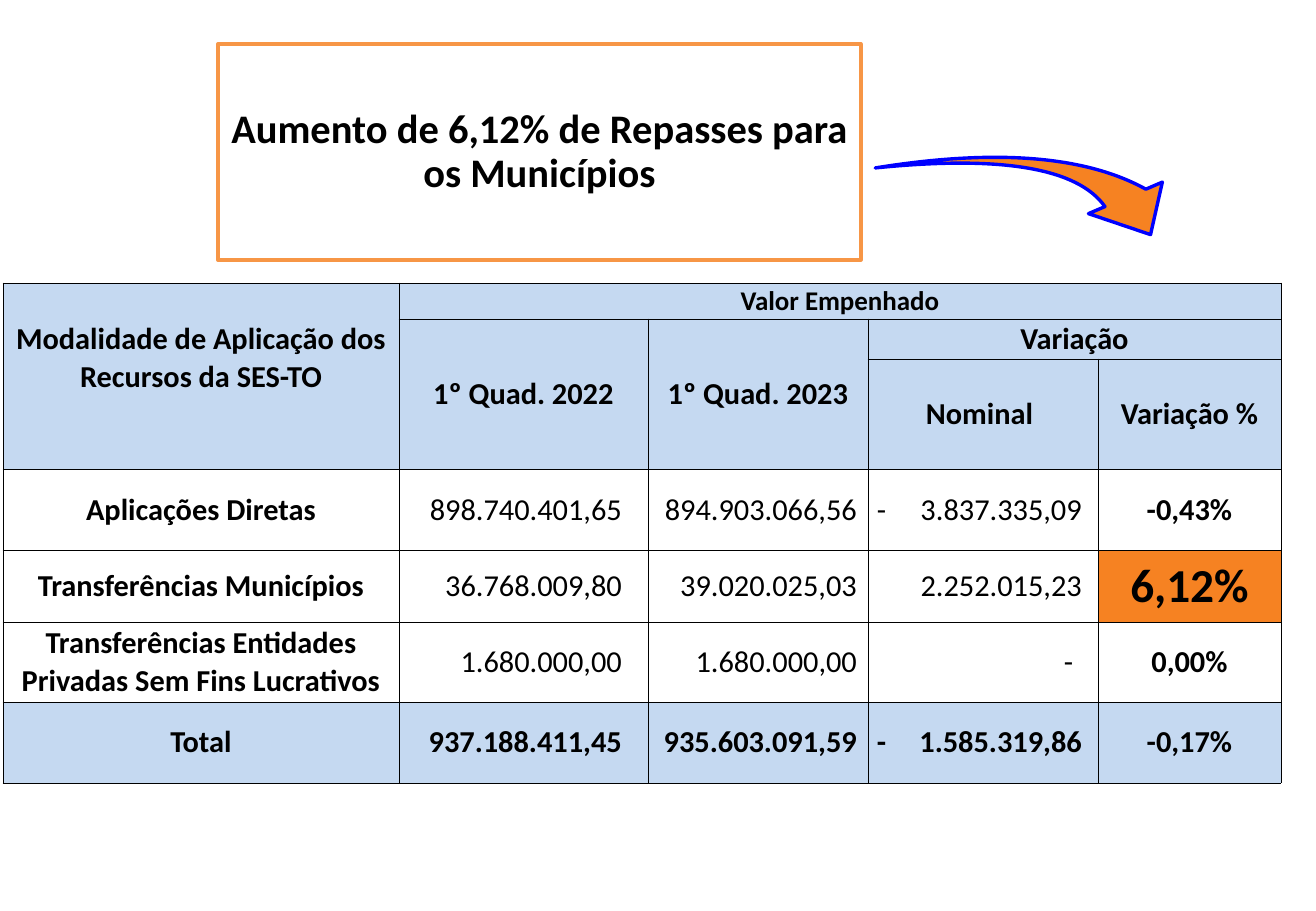
from lxml import etree
from pptx import Presentation
from pptx.dml.color import RGBColor
from pptx.enum.shapes import MSO_SHAPE
from pptx.enum.text import MSO_ANCHOR, MSO_AUTO_SIZE, PP_ALIGN
from pptx.oxml.ns import qn
from pptx.util import Emu, Pt

EMU_PER_PX = 914400 / 121.5
BLACK, WHITE, BLUE = "000000", "FFFFFF", "0000FF"
HEADER, ORANGE, FRAME = "C5D9F1", "F68222", "F79646"


def px(length):
    return Emu(round(length * EMU_PER_PX))


def color(value):
    return RGBColor.from_string(value)


def apply(target, values):
    for name, value in values.items():
        setattr(target, name, value)


class SlideBuilder:
    """Holds the text style and the current page."""

    font_name = "Calibri"

    def __init__(self, deck):
        self.page = deck.slides.add_slide(deck.slide_layouts[5])

    def paint(self, shape, fill, line):
        shape.fill.solid()
        shape.fill.fore_color.rgb = color(fill)
        shape.line.color.rgb = color(line)
        shape.line.width = Pt(2)

    def add_text(self, para, text, size, bold=True, align=PP_ALIGN.CENTER):
        para.alignment = align
        span = para.add_run()
        span.text = text
        apply(span.font, {"name": self.font_name, "size": Pt(size), "bold": bold})
        span.font.color.rgb = color(BLACK)

    def title(self, text, left, top, width, height):
        box = self.page.shapes.title
        apply(box, {"left": px(left), "top": px(top),
                    "width": px(width), "height": px(height)})
        self.paint(box, WHITE, FRAME)
        frame = box.text_frame
        apply(frame, {"word_wrap": True, "auto_size": MSO_AUTO_SIZE.NONE,
                      "vertical_anchor": MSO_ANCHOR.MIDDLE,
                      "margin_left": px(4), "margin_right": px(4),
                      "margin_top": px(4), "margin_bottom": px(4)})
        para = frame.paragraphs[0]
        para.line_spacing = 0.9
        self.add_text(para, text, 24)

    def swoosh(self, left, top, width, height, rotation, bends):
        arrow = self.page.shapes.add_shape(
            MSO_SHAPE.SWOOSH_ARROW, px(left), px(top), px(width), px(height))
        arrow.shadow.inherit = False
        arrow.rotation = rotation
        for index, bend in enumerate(bends):
            arrow.adjustments[index] = bend
        self.paint(arrow, ORANGE, BLUE)

    def table(self, left, top, widths, heights):
        table = self.page.shapes.add_table(
            len(heights), len(widths), px(left), px(top),
            px(sum(widths)), px(sum(heights))).table
        apply(table, {"first_row": False, "horz_banding": False})
        for column, width in zip(table.columns, widths):
            column.width = px(width)
        for row, height in zip(table.rows, heights):
            row.height = px(height)
        for cell in table.iter_cells():
            apply(cell, {"margin_left": 0, "margin_right": 0, "margin_top": 0,
                         "margin_bottom": 0, "vertical_anchor": MSO_ANCHOR.MIDDLE})
            self.border(cell)
        return table

    def border(self, cell):
        properties = cell._tc.get_or_add_tcPr()
        for side in ("a:lnL", "a:lnR", "a:lnT", "a:lnB"):
            line = etree.SubElement(properties, qn(side), w=str(Pt(0.5)))
            fill = etree.SubElement(line, qn("a:solidFill"))
            etree.SubElement(fill, qn("a:srgbClr"), val=BLACK)

    def fill(self, cell, value):
        cell.fill.solid()
        cell.fill.fore_color.rgb = color(value)

    def amount(self, cell, text, bold, gap):
        """Right-aligned number; a leading sign stands at the left edge."""
        para = cell.text_frame.paragraphs[0]
        if "\t" not in text:
            cell.margin_right = px(gap)
            self.add_text(para, text, 18, bold, PP_ALIGN.RIGHT)
            return
        cell.margin_left = px(SIGN_INSET)
        stops = etree.SubElement(para._p.get_or_add_pPr(), qn("a:tabLst"))
        position = px(WIDTHS[3] - SIGN_INSET - gap)
        etree.SubElement(stops, qn("a:tab"), pos=str(position), algn="r")
        self.add_text(para, text, 18, bold, PP_ALIGN.LEFT)


WIDTHS = [396, 249, 220, 230, 183]
HEIGHTS = [36, 40, 110, 81, 72, 80, 81]
SIGN_INSET = 9
GAPS = [26, 11, 16]
DASH_GAP = 25

# First row, first column, last row, last column, text, size, extra margins
HEADINGS = [
    (0, 0, 2, 0, "Modalidade de Aplicação dos Recursos da SES-TO", 18,
     {"margin_bottom": px(36)}),
    (0, 1, 0, 4, "Valor Empenhado", 16, {}),
    (1, 1, 2, 1, "1º Quad. 2022", 18, {}),
    (1, 2, 2, 2, "1º Quad. 2023", 18, {}),
    (1, 3, 1, 4, "Variação", 18, {}),
    (2, 3, 2, 3, "Nominal", 18, {"margin_right": px(7)}),
    (2, 4, 2, 4, "Variação %", 18, {}),
]
ROWS = [
    ("Aplicações Diretas", "898.740.401,65", "894.903.066,56",
     "-\t3.837.335,09", "-0,43%"),
    ("Transferências Municípios", "36.768.009,80", "39.020.025,03",
     "2.252.015,23", "6,12%"),
    ("Transferências Entidades Privadas Sem Fins Lucrativos",
     "1.680.000,00", "1.680.000,00", "-", "0,00%"),
    ("Total", "937.188.411,45", "935.603.091,59", "-\t1.585.319,86", "-0,17%"),
]


def main():
    deck = Presentation()
    apply(deck, {"slide_width": px(1316), "slide_height": px(911)})
    builder = SlideBuilder(deck)

    # Title and arrow
    builder.title("Aumento de 6,12% de Repasses para os Municípios",
                  218, 44, 643, 216)
    builder.swoosh(954, 62, 143, 271, 73.3, (0.163, 0.314))

    # Table headings
    table = builder.table(3, 283, WIDTHS, HEIGHTS)
    for top, left, bottom, right, text, size, margins in HEADINGS:
        cell = table.cell(top, left)
        if (top, left) != (bottom, right):
            cell.merge(table.cell(bottom, right))
        apply(cell, margins)
        builder.add_text(cell.text_frame.paragraphs[0], text, size)
    for row in range(3):
        for column in range(len(WIDTHS)):
            builder.fill(table.cell(row, column), HEADER)

    # Table values
    for row, values in enumerate(ROWS, start=3):
        is_total = values[0] == "Total"
        for column, text in enumerate(values):
            cell = table.cell(row, column)
            is_highlight = text == "6,12%"
            base = HEADER if is_total else WHITE
            builder.fill(cell, ORANGE if is_highlight else base)
            if column in (1, 2, 3):
                gap = DASH_GAP if text == "-" else GAPS[column - 1]
                builder.amount(cell, text, is_total, gap)
            else:
                builder.add_text(cell.text_frame.paragraphs[0], text,
                                 28 if is_highlight else 18)

    deck.save("out.pptx")


if __name__ == "__main__":
    main()
